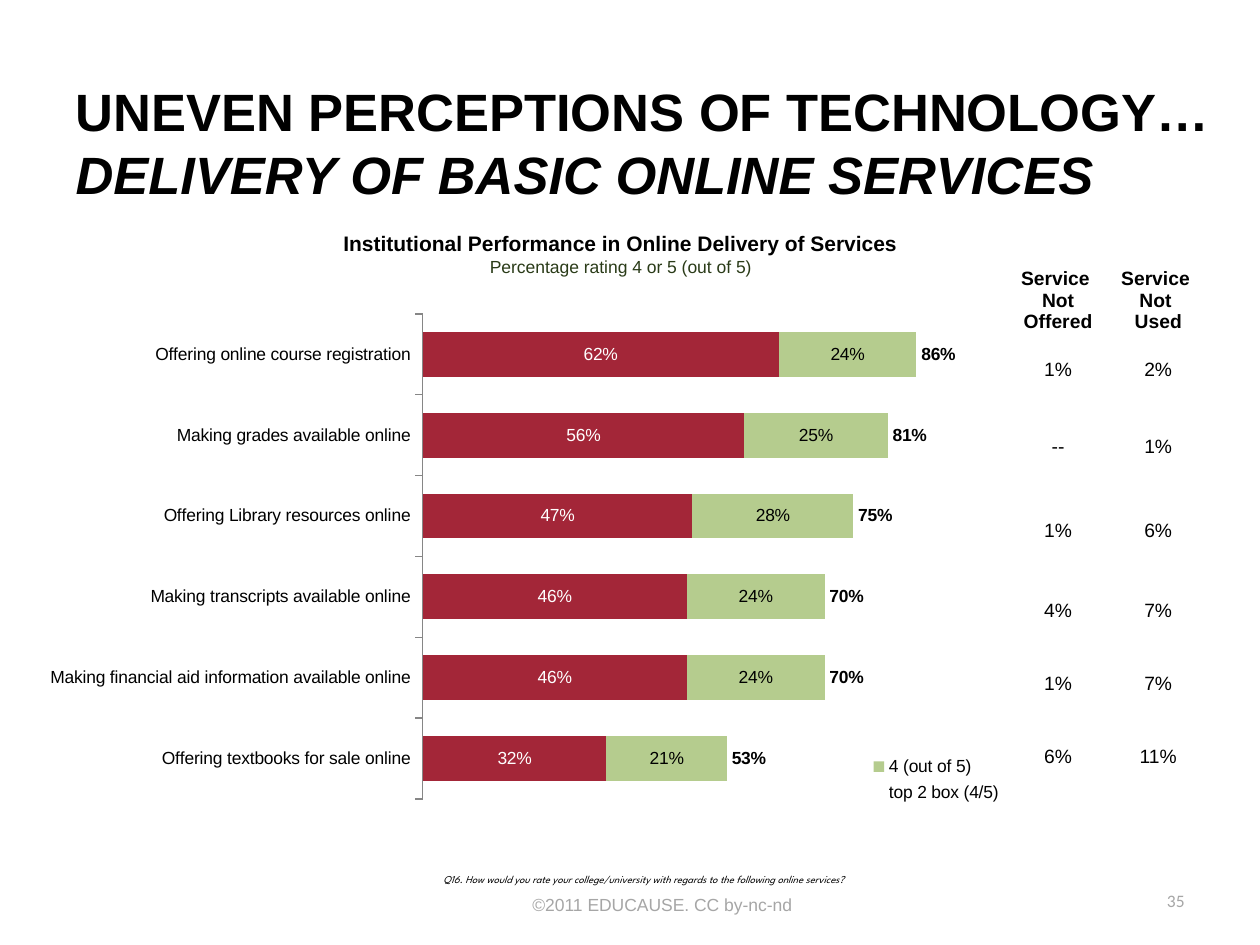
from copy import deepcopy

from lxml import etree
from pptx import Presentation
from pptx.chart.data import CategoryChartData
from pptx.dml.color import RGBColor
from pptx.enum.chart import XL_CHART_TYPE, XL_LABEL_POSITION, XL_LEGEND_POSITION, XL_TICK_MARK
from pptx.enum.text import MSO_ANCHOR, PP_ALIGN
from pptx.oxml.ns import qn
from pptx.util import Inches, Pt

STACKED = XL_CHART_TYPE.BAR_STACKED
CENTER, BASE = XL_LABEL_POSITION.CENTER, XL_LABEL_POSITION.INSIDE_BASE
SIDE = XL_LEGEND_POSITION.RIGHT
OUT, NONE = XL_TICK_MARK.OUTSIDE, XL_TICK_MARK.NONE
TOP, MIDDLE, BOTTOM = MSO_ANCHOR.TOP, MSO_ANCHOR.MIDDLE, MSO_ANCHOR.BOTTOM
LEFT, MID, RIGHT = PP_ALIGN.LEFT, PP_ALIGN.CENTER, PP_ALIGN.RIGHT

SERVICES = [
    "Offering online course registration",
    "Making grades available online",
    "Offering Library resources online",
    "Making transcripts available online",
    "Making financial aid information available online",
    "Offering textbooks for sale online",
]
SERIES = [
    ("5 (out of 5)", [0.62, 0.56, 0.47, 0.46, 0.46, 0.32], "A32638", "FFFFFF"),
    ("4 (out of 5)", [0.24, 0.25, 0.28, 0.24, 0.24, 0.21], "B5CC8E", "000000"),
    ("top 2 box (4/5)", [0.86, 0.81, 0.75, 0.70, 0.70, 0.53], None, "000000"),
]
ROWS = [
    ("Service \vNot Offered", "Service \vNot \vUsed"),
    ("1%", "2%"),
    ("--", "1%"),
    ("1%", "6%"),
    ("4%", "7%"),
    ("1%", "7%"),
    ("6%", "11%"),
]
HEIGHTS = [0.63, 0.58, 0.65, 0.68, 0.58, 0.58, 0.58]


def color(code):
    """Turn a hex string into a colour."""
    return RGBColor.from_string(code)


def style(font, size=10, hue="000000", face="Arial", bold=False, italic=False):
    """Format a font."""
    font.size, font.name = Pt(size), face
    font.bold, font.italic = bold, italic
    font.color.rgb = color(hue)


def write(para, text, align=LEFT, **look):
    """Fill a paragraph with formatted text and line breaks."""
    para.text = text
    para.alignment = align
    for run in para.runs:
        style(run.font, **look)
    for gap in para._p.findall(qn("a:br")):
        gap.append(deepcopy(para.runs[0]._r.rPr))


def note(slide, box, text, anchor=TOP, **look):
    """Add a wrapped text box and return its frame."""
    frame = slide.shapes.add_textbox(*map(Inches, box)).text_frame
    frame.word_wrap = True
    frame.vertical_anchor = anchor
    write(frame.paragraphs[0], text, **look)
    return frame


def head(slide):
    """Place and fill the title."""
    title = slide.shapes.title
    title.left, title.top = Inches(0.5), Inches(0.5)
    title.width, title.height = Inches(9.5), Inches(1.25)
    title.text_frame.vertical_anchor = MIDDLE
    para = title.text_frame.paragraphs[0]
    write(para, "UNEVEN PERCEPTIONS OF TECHNOLOGY…\vDELIVERY OF BASIC ONLINE SERVICES",
          size=30, bold=True)
    para.runs[1].font.italic = True


def place(parent, spot, inner=False, **sides):
    """Give a chart part a manual layout."""
    for old in parent.findall(qn("c:layout")):
        parent.remove(old)
    layout = etree.Element(qn("c:layout"))
    manual = etree.SubElement(layout, qn("c:manualLayout"))
    parts = {"layoutTarget": "inner"} if inner else {}
    parts.update(xMode="edge", yMode="edge", **sides)
    for name, value in parts.items():
        etree.SubElement(manual, qn("c:" + name)).set("val", str(value))
    parent.insert(spot, layout)


def key(chart):
    """Add the legend with one entry hidden."""
    chart.has_legend = True
    legend = chart.legend
    legend.position = SIDE
    legend.include_in_layout = False
    style(legend.font)
    entry = etree.Element(qn("c:legendEntry"))
    etree.SubElement(entry, qn("c:idx")).set("val", "2")
    etree.SubElement(entry, qn("c:delete")).set("val", "1")
    legend._element.insert(1, entry)
    place(legend._element, 2, x=0.83, y=0.87, w=0.17, h=0.11)


def paint(series, fill, ink):
    """Colour a series and its labels."""
    if fill:
        series.format.fill.solid()
        series.format.fill.fore_color.rgb = color(fill)
    else:
        series.format.fill.background()
    series.format.line.fill.background()
    labels = series.data_labels
    labels.show_value = True
    labels.number_format, labels.number_format_is_linked = "0%", False
    labels.position = CENTER if fill else BASE
    style(labels.font, hue=ink, bold=not fill)


def bars(slide):
    """Add the stacked bar chart."""
    data = CategoryChartData(number_format="0%")
    data.categories = SERVICES
    for name, values, _, _ in SERIES:
        data.add_series(name, values)
    box = map(Inches, (0.4, 2.33, 7.68, 4.17))
    chart = slide.shapes.add_chart(STACKED, *box, data).chart
    style(chart.font, size=18, face="Calibri")
    chart.has_title = False
    plot = chart.plots[0]
    plot.gap_width, plot.overlap = 80, 100
    plot.vary_by_categories = False
    for series, (_, _, fill, ink) in zip(plot.series, SERIES):
        paint(series, fill, ink)
    axis = chart.category_axis
    axis.reverse_order = True
    axis.major_tick_mark, axis.minor_tick_mark = OUT, NONE
    axis.format.line.color.rgb = color("868686")
    style(axis.tick_labels.font)
    scale = chart.value_axis
    scale.minimum_scale, scale.maximum_scale = 0, 1
    scale.has_major_gridlines = False
    scale.visible = False
    place(chart._chartSpace.chart.plotArea, 0, inner=True, x=0.382, y=0.039, w=0.596, h=0.923)
    key(chart)


def grid(slide):
    """Add the table of services not offered or used."""
    box = map(Inches, (8, 2.01, 1.59, 4.26))
    table = slide.shapes.add_table(len(ROWS), 2, *box).table
    table.first_row = table.horz_banding = False
    for row, high, texts in zip(table.rows, HEIGHTS, ROWS):
        row.height = Inches(high)
        top = texts is ROWS[0]
        for cell, text in zip(row.cells, texts):
            cell.fill.background()
            cell.margin_left = cell.margin_right = cell.margin_top = Inches(0.01)
            cell.margin_bottom = 0
            cell.vertical_anchor = BOTTOM if top else MIDDLE
            write(cell.text_frame.paragraphs[0], text, align=MID, size=11, bold=top)


def main():
    """Build the slide and save it."""
    deck = Presentation()
    deck.slide_width, deck.slide_height = Inches(10), Inches(7.5)
    slide = deck.slides.add_slide(deck.slide_layouts[5])
    head(slide)
    note(slide, (3.67, 6.98, 3.17, 0.4), "©2011 EDUCAUSE. CC by-nc-nd",
         anchor=MIDDLE, align=MID, hue="A6A6A6")
    note(slide, (7.17, 6.95, 2.33, 0.4), "35",
         anchor=MIDDLE, align=RIGHT, hue="A6A6A6", face="Calibri")
    note(slide, (3.42, 6.88, 6.33, 0.2),
         "Q16. How would you rate your college/university with regards to "
         "the following online services?",
         size=6, face="League Spartan", italic=True)
    frame = note(slide, (2.42, 1.78, 5.01, 0.47),
                 "Institutional Performance in Online Delivery of Services",
                 align=MID, size=12, bold=True)
    write(frame.add_paragraph(), "Percentage rating 4 or 5 (out of 5)", align=MID, hue="2A3B18")
    bars(slide)
    grid(slide)
    deck.save("out.pptx")


if __name__ == "__main__":
    main()
